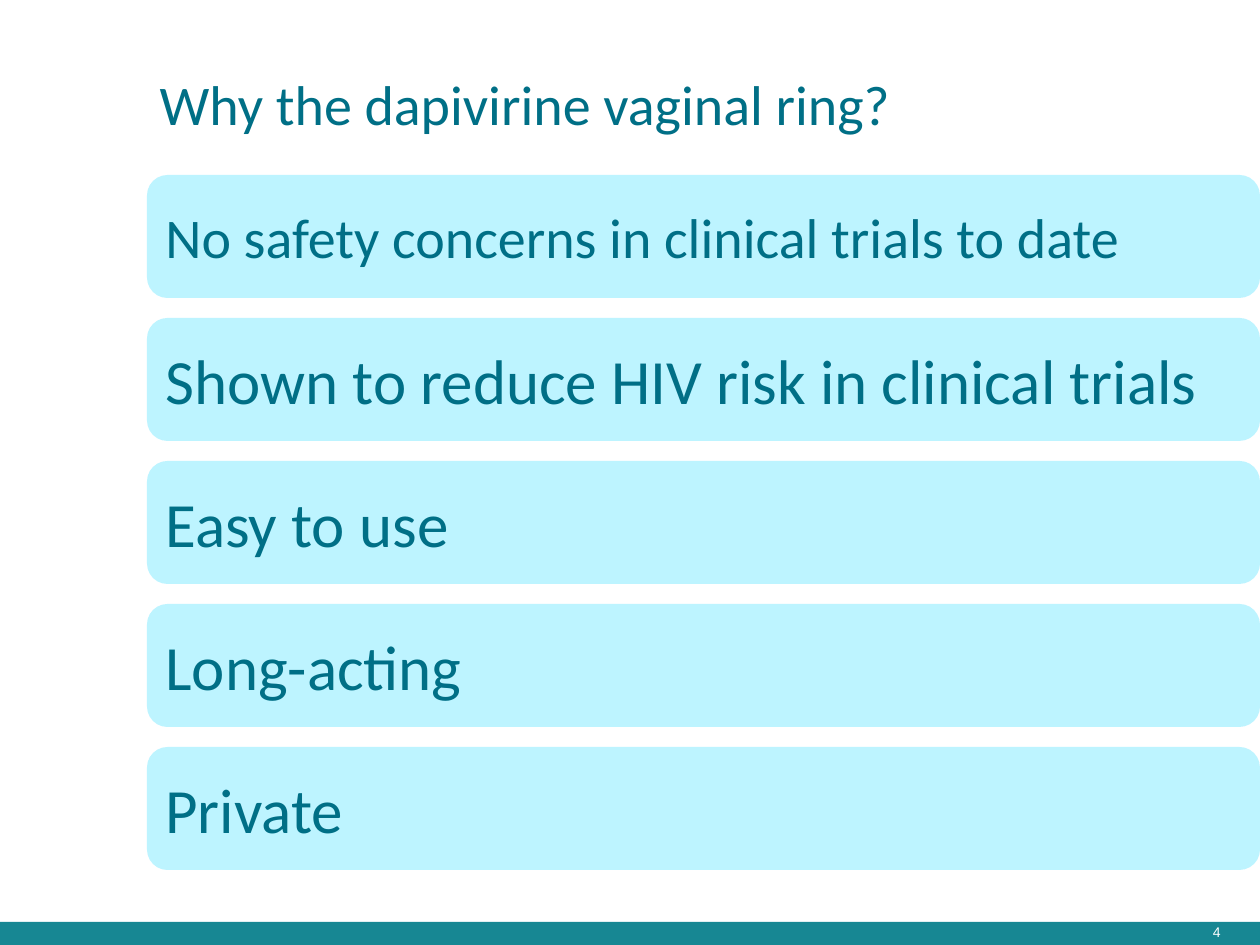
from dataclasses import dataclass

from pptx import Presentation
from pptx.dml.color import RGBColor
from pptx.enum.shapes import MSO_SHAPE
from pptx.enum.text import MSO_ANCHOR, PP_ALIGN
from pptx.util import Emu, Pt

PX_PER_INCH = 126


@dataclass(frozen=True)
class Theme:
    ink: RGBColor = RGBColor(0x00, 0x6F, 0x86)
    panel: RGBColor = RGBColor(0xBD, 0xF4, 0xFF)
    footer: RGBColor = RGBColor(0x17, 0x87, 0x93)
    white: RGBColor = RGBColor(0xFF, 0xFF, 0xFF)
    text_font: str = "Calibri"
    number_font: str = "Arial"
    title_size: int = 32
    reason_size: int = 36
    number_size: int = 8


THEME = Theme()

REASONS = [
    ("No safety concerns in clinical trials to date", THEME.title_size),
    ("Shown to reduce HIV risk in clinical trials", THEME.reason_size),
    ("Easy to use", THEME.reason_size),
    ("Long-acting", THEME.reason_size),
    ("Private", THEME.reason_size),
]


def px(length):
    return Emu(round(length * 914400 / PX_PER_INCH))


def write(frame, wording, size, color, font, align=PP_ALIGN.LEFT, anchor=MSO_ANCHOR.MIDDLE):
    frame.word_wrap = True
    frame.vertical_anchor = anchor
    paragraph = frame.paragraphs[0]
    paragraph.text = wording
    paragraph.alignment = align
    paragraph.font.size = Pt(size)
    paragraph.font.name = font
    paragraph.font.color.rgb = color


def add_panel(slide, preset, box, color):
    panel = slide.shapes.add_shape(preset, *map(px, box))
    panel.shadow.inherit = False
    panel.fill.solid()
    panel.fill.fore_color.rgb = color
    panel.line.fill.background()
    return panel


def place_title(slide, box, wording):
    title = slide.shapes.title
    title.left, title.top, title.width, title.height = map(px, box)
    write(title.text_frame, wording, THEME.title_size, THEME.ink, THEME.text_font)


def add_reasons(slide, box, reasons, reason_height):
    left, top, width, height = box
    pitch = (height - reason_height) // (len(reasons) - 1)
    for row, (wording, size) in enumerate(reasons):
        reason_box = (left, top + row * pitch, width, reason_height)
        reason = add_panel(slide, MSO_SHAPE.ROUNDED_RECTANGLE, reason_box, THEME.panel)
        write(reason.text_frame, wording, size, THEME.ink, THEME.text_font)


def add_footer(slide, box, number):
    left, top, width, height = box
    add_panel(slide, MSO_SHAPE.RECTANGLE, box, THEME.footer)
    number_box = (left + width - 150, top - 5, 123, 30)
    page_number = slide.shapes.add_textbox(*map(px, number_box))
    write(page_number.text_frame, number, THEME.number_size, THEME.white,
          THEME.number_font, PP_ALIGN.RIGHT, MSO_ANCHOR.TOP)


def main():
    deck = Presentation()
    deck.slide_width, deck.slide_height = px(1260), px(945)
    slide = deck.slides.add_slide(deck.slide_layouts[5])
    add_footer(slide, (0, 922, 1260, 23), "4")
    place_title(slide, (147, 55, 999, 97), "Why the dapivirine vaginal ring?")
    add_reasons(slide, (147, 175, 1113, 695), REASONS, 123)
    deck.save("out.pptx")


if __name__ == "__main__":
    main()
